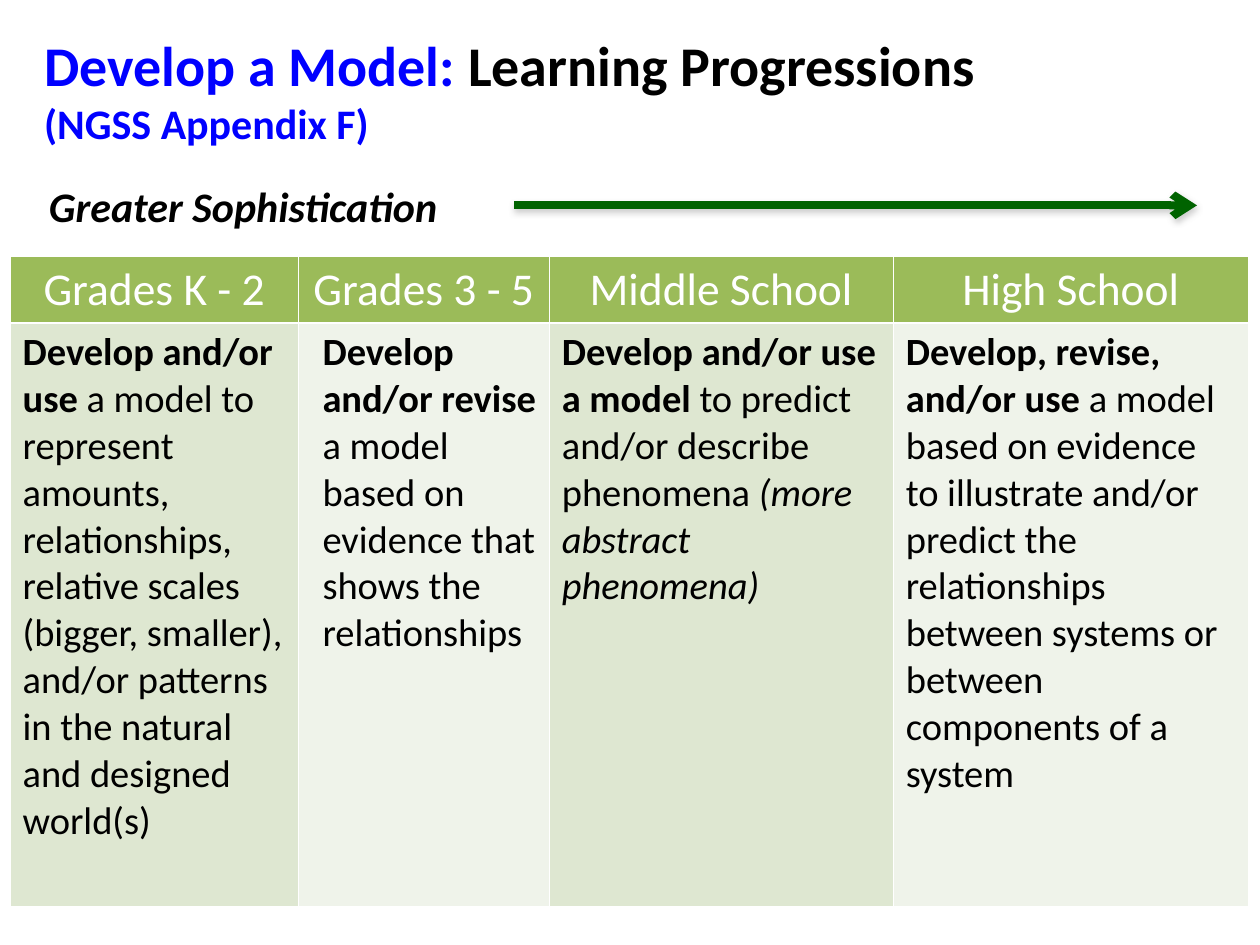
from lxml.etree import SubElement
from pptx import Presentation
from pptx.dml.color import RGBColor
from pptx.enum.shapes import MSO_CONNECTOR
from pptx.enum.text import MSO_ANCHOR, MSO_AUTO_SIZE, PP_ALIGN
from pptx.oxml import parse_xml
from pptx.oxml.ns import nsdecls, qn
from pptx.util import Inches, Pt

THEME = {
    "font": "Calibri",
    "black": "000000", "white": "FFFFFF", "blue": "0000FF", "arrow": "006300",
    "header": "9BBB59", "bands": ["DEE7D1", "EFF3EA"],
    "title": 32, "subtitle": 24, "head": 26, "body": 22,
}


def add_run(p, text, size, color="black", bold=False, italic=False):
    r = p.add_run()
    r.text = text
    r.font.name = THEME["font"]
    r.font.size = Pt(size)
    r.font.bold = bold
    r.font.italic = italic
    r.font.color.rgb = RGBColor.from_string(THEME[color])


def style_cell(cell, fill):
    cell.fill.solid()
    cell.fill.fore_color.rgb = RGBColor.from_string(fill)
    tcPr = cell._tc.get_or_add_tcPr()
    for i, side in enumerate(["lnL", "lnR", "lnT", "lnB"]):
        tcPr.insert(i, parse_xml(
            f'<a:{side} {nsdecls("a")} w="{Pt(1)}"><a:solidFill>'
            f'<a:srgbClr val="{THEME["white"]}"/></a:solidFill></a:{side}>'))


prs = Presentation()
prs.slide_width, prs.slide_height = Inches(10), Inches(7.5)
s = prs.slides.add_slide(prs.slide_layouts[5])

# Title
title = s.shapes.title
title.left, title.top = Inches(0), Inches(0.19)
title.width, title.height = Inches(10), Inches(1.1)
tf = title.text_frame
tf.auto_size = MSO_AUTO_SIZE.NONE
tf.vertical_anchor = MSO_ANCHOR.TOP
title_lines = [
    [("Develop a Model: ", "title", "blue"), ("Learning Progressions", "title", "black")],
    [("(NGSS Appendix F)", "subtitle", "blue")],
]
for i, line in enumerate(title_lines):
    p = tf.paragraphs[0] if i == 0 else tf.add_paragraph()
    p.alignment = PP_ALIGN.LEFT
    p._p.get_or_add_pPr().set("marL", str(Inches(0.25)))
    for text, size, color in line:
        add_run(p, text, THEME[size], color, bold=True)

# Sophistication arrow
arrow = s.shapes.add_connector(
    MSO_CONNECTOR.STRAIGHT, Inches(4.08), Inches(1.63), Inches(9.5), Inches(1.63))
arrow.line.width = Pt(4.5)
arrow.line.color.rgb = RGBColor.from_string(THEME["arrow"])
SubElement(arrow.line._get_or_add_ln(), qn("a:tailEnd"), type="arrow")
arrow._element.spPr.append(parse_xml(
    f'<a:effectLst {nsdecls("a")}><a:outerShdw blurRad="{Pt(3.1)}" dist="{Pt(1.6)}" '
    'dir="5400000" rotWithShape="0"><a:srgbClr val="808080"><a:alpha val="38000"/>'
    '</a:srgbClr></a:outerShdw></a:effectLst>'))

# Arrow label
label = s.shapes.add_textbox(Inches(0.17), Inches(1.38), Inches(9.67), Inches(0.5))
label.text_frame.word_wrap = True
p = label.text_frame.paragraphs[0]
p._p.get_or_add_pPr().set("marL", str(Inches(0.12)))
add_run(p, "Greater Sophistication", THEME["subtitle"], bold=True, italic=True)

# Progression table: heading, column width, indent, bold lead, plain text, italic ending
grades = [
    ("Grades K - 2", 2.29, 0, "Develop and/or use ",
     "a model to represent amounts, relationships, relative scales (bigger, smaller), "
     "and/or patterns in the natural and designed world(s)", ""),
    ("Grades 3 - 5", 1.99, 0.09, "Develop and/or revise ",
     "a model based on evidence that shows the relationships", ""),
    ("Middle School", 2.73, 0, "Develop and/or use a model ",
     "to predict and/or describe phenomena ", "(more abstract phenomena)"),
    ("High School", 2.82, 0, "Develop, revise, and/or use ",
     "a model based on evidence to illustrate and/or predict the relationships "
     "between systems or between components of a system", ""),
]
table = s.shapes.add_table(
    2, len(grades), Inches(0.08), Inches(2.03), Inches(9.83), Inches(5.15)).table
table.rows[0].height, table.rows[1].height = Inches(0.52), Inches(4.63)
for col, (heading, width, indent, lead, plain, ending) in enumerate(grades):
    table.columns[col].width = Inches(width)
    head, body = table.cell(0, col), table.cell(1, col)
    style_cell(head, THEME["header"])
    style_cell(body, THEME["bands"][col % 2])

    p = head.text_frame.paragraphs[0]
    p.alignment = PP_ALIGN.CENTER
    add_run(p, heading, THEME["head"], "white")

    p = body.text_frame.paragraphs[0]
    p._p.get_or_add_pPr().set("marL", str(Inches(indent)))
    add_run(p, lead, THEME["body"], bold=True)
    add_run(p, plain, THEME["body"])
    if ending:
        add_run(p, ending, THEME["body"], italic=True)

prs.save("out.pptx")
